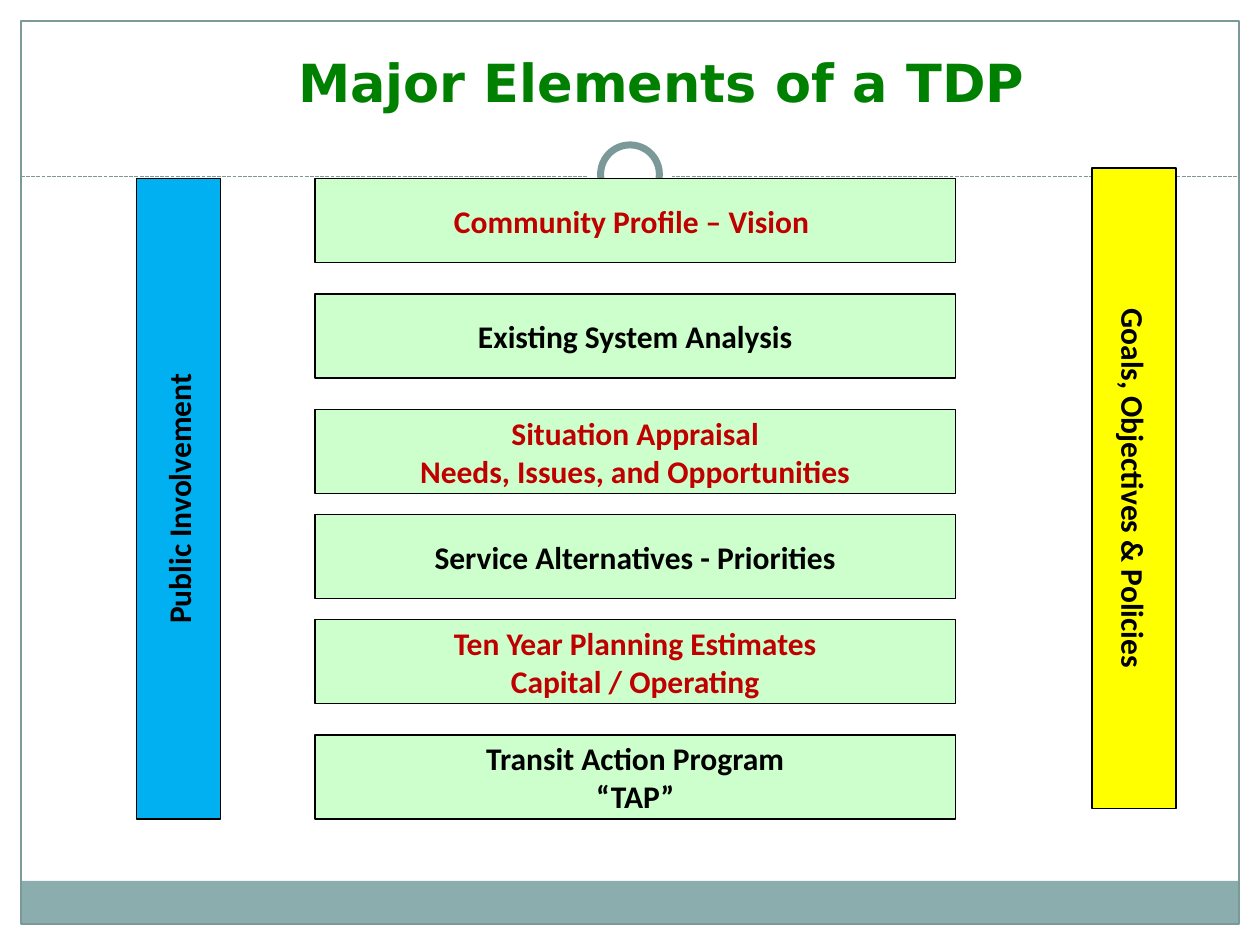
from dataclasses import dataclass

from pptx import Presentation
from pptx.dml.color import RGBColor
from pptx.enum.dml import MSO_LINE_DASH_STYLE as Dash
from pptx.enum.shapes import MSO_CONNECTOR_TYPE as Connector
from pptx.enum.shapes import MSO_SHAPE as Shape
from pptx.enum.text import MSO_ANCHOR as Anchor
from pptx.enum.text import PP_ALIGN as Align
from pptx.oxml.ns import qn
from pptx.util import Emu, Pt
from lxml.etree import SubElement

PX = 914400 // 120
COLOURS = {
    "paper": "FFFFFF",
    "ink": "000000",
    "frame": "7C999A",
    "band": "8CADAE",
    "title": "008000",
    "goals": "FFFF00",
    "public": "00B0F0",
    "element": "CCFFCC",
    "accent": "C00000",
}
TITLE_FONT = {"name": "DejaVu Sans", "size": Pt(30), "bold": True}
LABEL_FONT = {"name": "Calibri", "size": Pt(18), "bold": True}
BAR_LENGTH, BAR_DEPTH = 610, 80
ELEMENT_LEFT = 300


@dataclass(frozen=True)
class Block:
    left: int
    top: int
    width: int
    height: int
    fill: str = ""
    line: str = ""
    weight: float = 0.75
    kind: Shape = Shape.RECTANGLE


@dataclass(frozen=True)
class Bar:
    left: int
    top: int
    fill: str
    ink: str
    lines: tuple[str, ...]
    rotation: int = 0


DECORATION = (
    Block(20, 839, 1159, 41, fill="band"),
    Block(20, 20, 1160, 860, line="frame"),
)
RING = (
    Block(560, 126, 80, 80, fill="paper", kind=Shape.OVAL),
    Block(572, 138, 56, 56, fill="paper", line="frame", weight=4, kind=Shape.OVAL),
)
SIDES = (
    Bar(775, 425, "goals", "ink", ("Goals, Objectives & Policies",), 90),
    Bar(-135, 435, "public", "ink", ("Public Involvement",), 270),
)
ELEMENTS = (
    (170, ("Community Profile – Vision ",)),
    (280, ("Existing System Analysis",)),
    (390, ("Situation Appraisal", "Needs, Issues, and Opportunities")),
    (490, ("Service Alternatives - Priorities",)),
    (590, ("Ten Year Planning Estimates", "Capital / Operating")),
    (700, ("Transit Action Program", "“TAP”")),
)


def colour(name: str) -> RGBColor:
    return RGBColor.from_string(COLOURS[name])


def scaled(*lengths: int) -> list[Emu]:
    return [Emu(length * PX) for length in lengths]


def write_lines(box, lines: tuple[str, ...], ink: str, font: dict, wrap: bool) -> None:
    frame = box.text_frame
    frame.word_wrap = wrap
    frame.vertical_anchor = Anchor.MIDDLE
    for index, line in enumerate(lines):
        para = frame.add_paragraph() if index else frame.paragraphs[0]
        para.alignment = Align.CENTER
        span = para.add_run()
        span.text = line
        for key, value in font.items():
            setattr(span.font, key, value)
        span.font.color.rgb = colour(ink)


def draw_block(page, block: Block):
    box = page.shapes.add_shape(
        block.kind, *scaled(block.left, block.top, block.width, block.height)
    )
    box.shadow.inherit = False
    if block.fill:
        box.fill.solid()
        box.fill.fore_color.rgb = colour(block.fill)
    else:
        box.fill.background()
    if block.line:
        box.line.color.rgb = colour(block.line)
        box.line.width = Pt(block.weight)
    else:
        box.line.fill.background()
    return box


def draw_divider(page) -> None:
    line = page.shapes.add_connector(Connector.STRAIGHT, *scaled(20, 168, 1180, 168))
    line.line.color.rgb = colour("frame")
    line.line.width = Pt(0.75)
    line.line.dash_style = Dash.SQUARE_DOT
    SubElement(line._element.spPr, qn("a:effectLst"))


def draw_bar(page, bar: Bar) -> None:
    block = Block(bar.left, bar.top, BAR_LENGTH, BAR_DEPTH, bar.fill, "ink")
    box = draw_block(page, block)
    box.rotation = bar.rotation
    write_lines(box, bar.lines, bar.ink, LABEL_FONT, wrap=False)


def main() -> None:
    deck = Presentation()
    deck.slide_width, deck.slide_height = scaled(1200, 900)
    page = deck.slides.add_slide(deck.slide_layouts[6])
    for block in DECORATION:
        draw_block(page, block)
    draw_divider(page)
    for block in RING:
        draw_block(page, block)
    title = page.shapes.add_textbox(*scaled(120, 36, 1020, 84))
    write_lines(title, ("Major Elements of a TDP",), "title", TITLE_FONT, wrap=True)
    for bar in SIDES:
        draw_bar(page, bar)
    for index, (top, lines) in enumerate(ELEMENTS):
        ink = "ink" if index % 2 else "accent"
        draw_bar(page, Bar(ELEMENT_LEFT, top, "element", ink, lines))
    deck.save("out.pptx")


if __name__ == "__main__":
    main()
